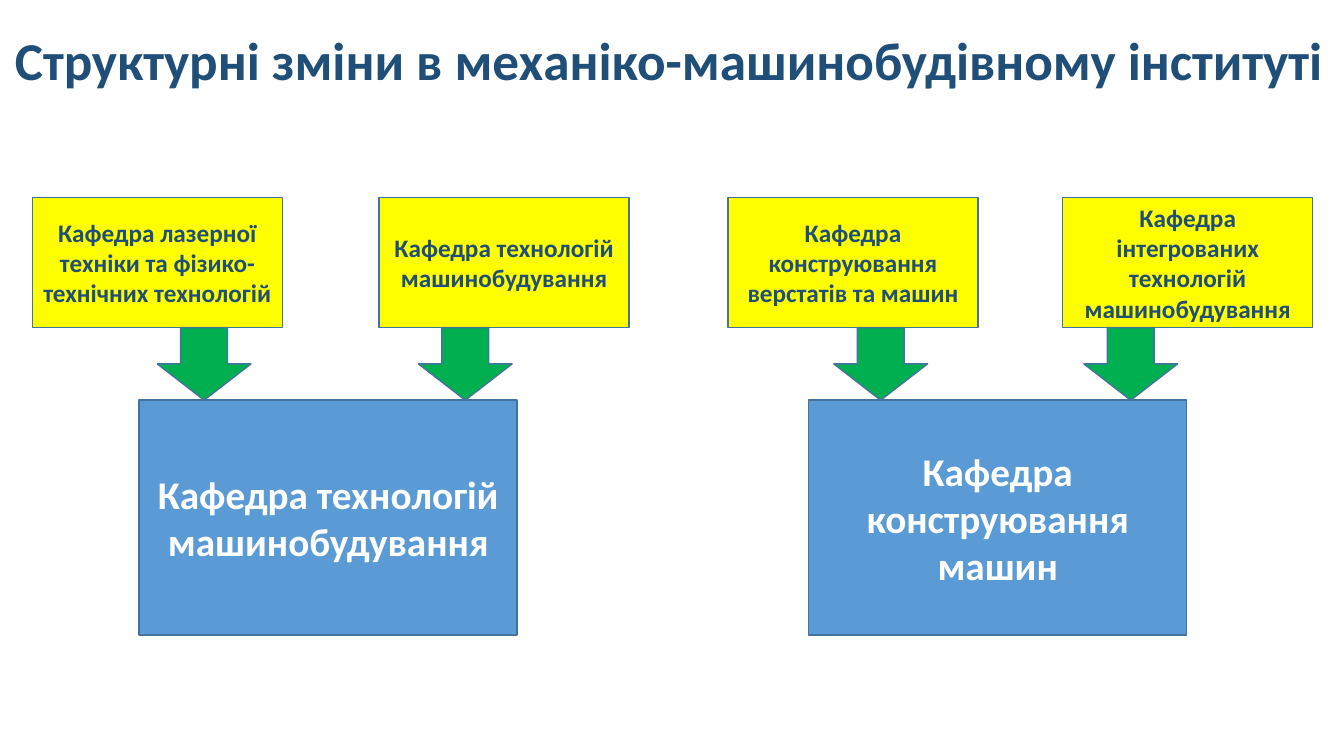
from pptx import Presentation
from pptx.dml.color import RGBColor
from pptx.enum.shapes import MSO_SHAPE as Preset
from pptx.enum.text import MSO_ANCHOR as Anchor, MSO_AUTO_SIZE as AutoSize, PP_ALIGN as Align
from pptx.util import Inches, Pt

NAVY, WHITE = "1F4E79", "FFFFFF"
YELLOW, BLUE, GREEN, OUTLINE = "FFFF00", "5B9BD5", "00B050", "43739E"


def color(value):
    return RGBColor.from_string(value)


class Page:
    """Current slide together with its drawing style."""

    font_name = "Calibri"

    def __init__(self, slide):
        self.shapes = slide.shapes

    def set_text(self, frame, text, size, ink, align):
        para = frame.paragraphs[0]
        para.text = text
        para.alignment = align
        para.font.name = self.font_name
        para.font.size = Pt(size)
        para.font.bold = True
        para.font.color.rgb = color(ink)

    def title(self, text, left, top, width, height):
        box = self.shapes.add_textbox(Inches(left), Inches(top), Inches(width), Inches(height))
        frame = box.text_frame
        frame.word_wrap = False
        frame.auto_size = AutoSize.SHAPE_TO_FIT_TEXT
        self.set_text(frame, text, 38, NAVY, Align.LEFT)

    def shape(self, preset, left, top, width, height, fill):
        shape = self.shapes.add_shape(
            preset, Inches(left), Inches(top), Inches(width), Inches(height))
        shape.shadow.inherit = False
        shape.fill.solid()
        shape.fill.fore_color.rgb = color(fill)
        shape.line.color.rgb = color(OUTLINE)
        shape.line.width = Pt(1)
        return shape

    def box(self, text, left, top, width, height, fill, size, ink):
        frame = self.shape(Preset.RECTANGLE, left, top, width, height, fill).text_frame
        frame.word_wrap = True
        frame.vertical_anchor = Anchor.MIDDLE
        self.set_text(frame, text, size, ink, Align.CENTER)

    def arrow(self, left, top, width, height):
        self.shape(Preset.DOWN_ARROW, left, top, width, height, GREEN)


# Each former department: name, box left, arrow left
FORMER = [
    ("Кафедра лазерної техніки та фізико-технічних технологій", 0.32, 1.56),
    ("Кафедра технологій машинобудування", 3.76, 4.15),
    ("Кафедра конструювання верстатів та машин", 7.22, 8.27),
    ("Кафедра інтегрованих технологій машинобудування", 10.54, 10.75),
]
# Each merged department: name, box left
MERGED = [
    ("Кафедра технологій машинобудування", 1.38),
    ("Кафедра конструювання машин", 8.02),
]
# Rows touch: former boxes, arrows, merged boxes
FORMER_TOP, FORMER_HEIGHT, ARROW_HEIGHT = 1.96, 1.29, 0.72
ARROW_TOP = FORMER_TOP + FORMER_HEIGHT
MERGED_TOP = ARROW_TOP + ARROW_HEIGHT


def main():
    deck = Presentation()
    deck.slide_width, deck.slide_height = Inches(13.33), Inches(7.5)
    page = Page(deck.slides.add_slide(deck.slide_layouts[6]))

    # Heading
    page.title("Структурні зміни в механіко-машинобудівному інституті",
               0.05, 0.22, 13.42, 0.74)

    # Departments before and after the merger
    for name, left, _ in FORMER:
        page.box(name, left, FORMER_TOP, 2.48, FORMER_HEIGHT, YELLOW, 18, NAVY)
    for name, left in MERGED:
        page.box(name, left, MERGED_TOP, 3.75, 2.33, BLUE, 28, WHITE)

    # Arrows between them
    for _, _, left in FORMER:
        page.arrow(left, ARROW_TOP, 0.93, ARROW_HEIGHT)

    deck.save("out.pptx")


if __name__ == "__main__":
    main()
